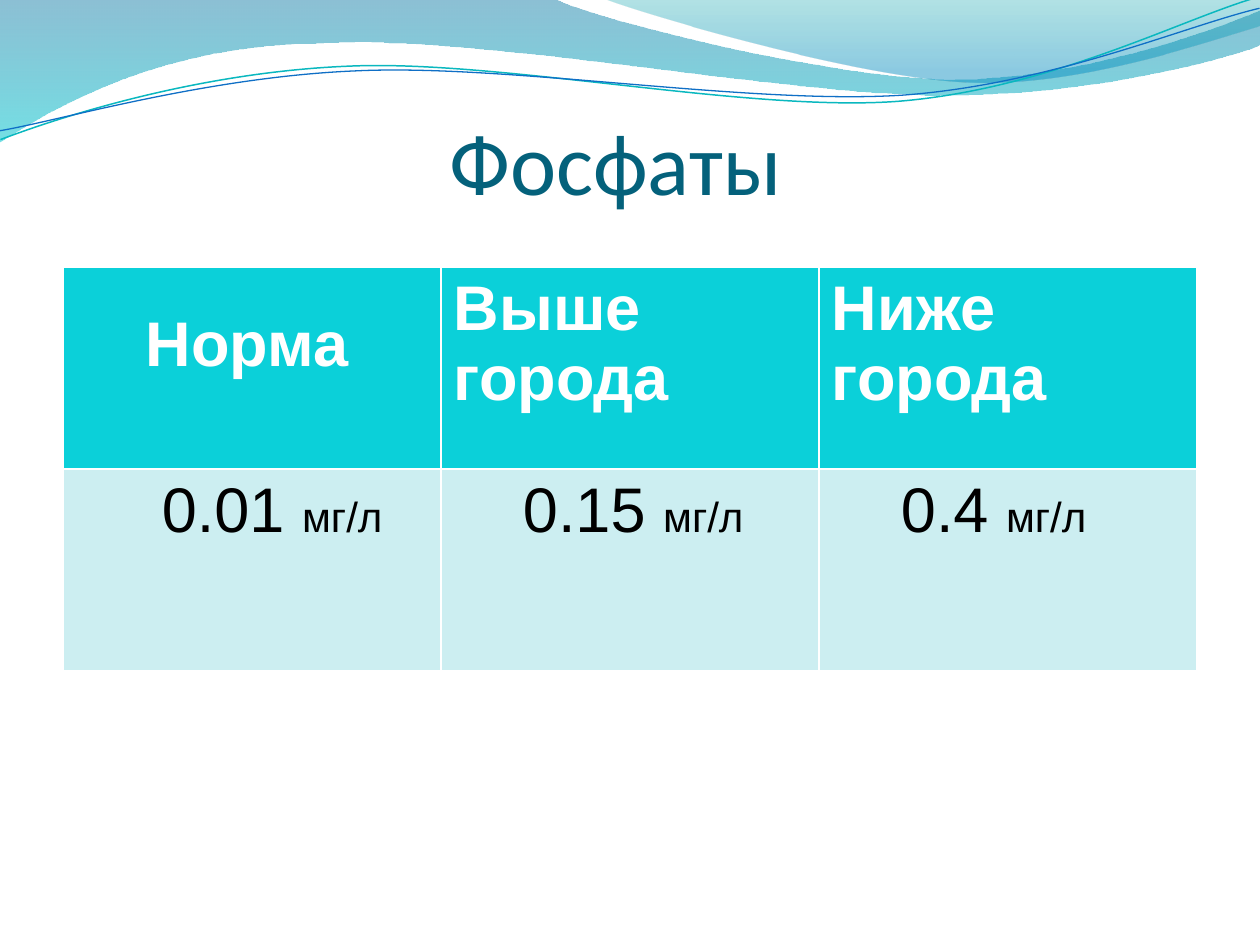
import dataclasses

import pptx
import pptx.dml.color
import pptx.enum.text
import pptx.oxml
import pptx.oxml.ns
import pptx.util

EMU_PER_PX = 914400 / 126


@dataclasses.dataclass(frozen=True)
class Theme:
    heading_font: str = "Calibri"
    body_font: str = "Arial"
    title: str = "04617B"
    header_fill: str = "0BD0D9"
    body_fill: str = "CCEEF1"
    white: str = "FFFFFF"
    black: str = "000000"
    teal_line: str = "0AB8BF"
    blue_line: str = "0F6FC6"
    # Gradient stops: position, colour, opacity in percent
    band: tuple = ((0, "0074A1", 45), (1, "00C6CF", 55))
    crest: tuple = ((0, "00A1A9", 30), (0.8, "008BBF", 45))
    title_size: int = 50
    cell_size: int = 36
    unit_size: int = 24
    curve_tilt: float = -2.7


THEME = Theme()

# Wave outlines in px: a start point, then lines (one point) or curves (three points)
BAND = [[(0, -1)], [(554, -1)],
        [(600, 21), (837, 79), (955, 79)], [(1075, 79), (1207, 33), (1260, 11)],
        [(1261, 45)], [(1239, 55), (1096, 96), (940, 95)],
        [(783, 95), (481, 35), (324, 43)], [(163, 44), (58, 105), (-1, 142)], [(0, -1)]]
CREST = [[(604, -1)], [(641, 14), (859, 78), (969, 82)],
         [(1079, 87), (1211, 40), (1260, 26)], [(1260, 0)], [(604, -1)]]
# Thin curves, before they are tilted
TEAL_CURVE = [[(-2, 110)], [(59, 90), (199, 52), (349, 53)],
              [(499, 53), (745, 118), (896, 114)], [(1049, 109), (1184, 45), (1260, 27)]]
BLUE_CURVE = [[(-2, 101)], [(57, 94), (207, 57), (357, 58)],
              [(508, 58), (750, 111), (902, 108)], [(1052, 104), (1187, 52), (1262, 38)]]


def px(length):
    return pptx.util.Emu(round(length * EMU_PER_PX))


def rgb(colour):
    return pptx.dml.color.RGBColor.from_string(colour)


def style(span, font, size, colour, bold=False):
    span.font.name = font
    span.font.size = pptx.util.Pt(size)
    span.font.color.rgb = rgb(colour)
    span.font.bold = bold


def add_outline(page, outline, close):
    start, *rest = [(px(x), px(y)) for segment in outline for x, y in segment]
    builder = page.shapes.build_freeform(*start)
    builder.add_line_segments(rest, close=close)
    shape = builder.convert_to_shape()
    shape.shadow.inherit = False
    # Merge each three line points into one cubic curve
    lines = iter(list(shape._element.iter(pptx.oxml.ns.qn("a:lnTo"))))
    for segment in outline[1:]:
        nodes = [next(lines) for _ in segment]
        if len(nodes) == 3:
            curve = pptx.oxml.parse_xml(f'<a:cubicBezTo {pptx.oxml.ns.nsdecls("a")}/>')
            nodes[0].addprevious(curve)
            for node in nodes:
                curve.append(node[0])
                node.getparent().remove(node)
    return shape


def add_wave(page, outline, stops):
    shape = add_outline(page, outline, close=True)
    shape.line.fill.background()
    shape.fill.gradient()
    shape.fill.gradient_angle = 270
    for stop, (position, colour, _) in zip(shape.fill.gradient_stops, stops):
        stop.position = position
        stop.color.rgb = rgb(colour)
    # Opacity of each stop
    colours = shape._element.spPr.iter(pptx.oxml.ns.qn("a:srgbClr"))
    for node, (_, _, opacity) in zip(list(colours), stops):
        node.append(pptx.oxml.parse_xml(
            f'<a:alpha {pptx.oxml.ns.nsdecls("a")} val="{opacity * 1000}"/>'))


def add_curve(page, outline, colour, width):
    shape = add_outline(page, outline, close=False)
    shape.rotation = THEME.curve_tilt
    shape.fill.background()
    shape.line.color.rgb = rgb(colour)
    shape.line.width = pptx.util.Pt(width)


def place_title(page, text):
    title = page.shapes.title
    title.left, title.top, title.width, title.height = px(54), px(55), px(1134), px(158)
    page.shapes._spTree.append(title._element)  # in front of the waves
    frame = title.text_frame
    frame.text = text
    frame.vertical_anchor = pptx.enum.text.MSO_ANCHOR.BOTTOM
    frame.margin_left, frame.margin_right = px(395), 0
    frame.margin_top, frame.margin_bottom = px(6), 0
    para = frame.paragraphs[0]
    para.alignment = pptx.enum.text.PP_ALIGN.LEFT
    style(para.runs[0], THEME.heading_font, THEME.title_size, THEME.title)


def fill_cell(cell, text, fill, colour, bold=False, indent=0, drop=0, unit=""):
    cell.fill.solid()
    cell.fill.fore_color.rgb = rgb(fill)
    cell.margin_left, cell.margin_top = px(13 + indent), px(6 + drop)
    para = cell.text_frame.paragraphs[0]
    para.text = text
    style(para.runs[0], THEME.body_font, THEME.cell_size, colour, bold)
    if unit:
        span = para.add_run()
        span.text = unit
        style(span, THEME.body_font, THEME.unit_size, colour, bold)


def add_readings(page, columns):
    # The default table style draws the white rules
    table = page.shapes.add_table(2, len(columns), px(63), px(267), px(1134), px(404)).table
    for index, (heading, heading_indent, drop, value, value_indent) in enumerate(columns):
        fill_cell(table.cell(0, index), heading, THEME.header_fill, THEME.white,
                  bold=True, indent=heading_indent, drop=drop)
        fill_cell(table.cell(1, index), value, THEME.body_fill, THEME.black,
                  indent=value_indent, unit="мг/л")


def main():
    deck = pptx.Presentation()
    deck.slide_width, deck.slide_height = px(1260), px(945)
    page = deck.slides.add_slide(deck.slide_layouts[5])

    # Waves along the top
    add_wave(page, BAND, THEME.band)
    add_wave(page, CREST, THEME.crest)
    add_curve(page, TEAL_CURVE, THEME.teal_line, 0.85)
    add_curve(page, BLUE_CURVE, THEME.blue_line, 0.75)

    # Title and table: heading, its indent and drop, value, its indent
    place_title(page, "Фосфаты")
    add_readings(page, [("Норма", 70, 36, "0.01 ", 86),
                        ("Выше города", 0, 0, "0.15 ", 69),
                        ("Ниже города", 0, 0, "0.4 ", 69)])
    deck.save("out.pptx")


if __name__ == "__main__":
    main()
